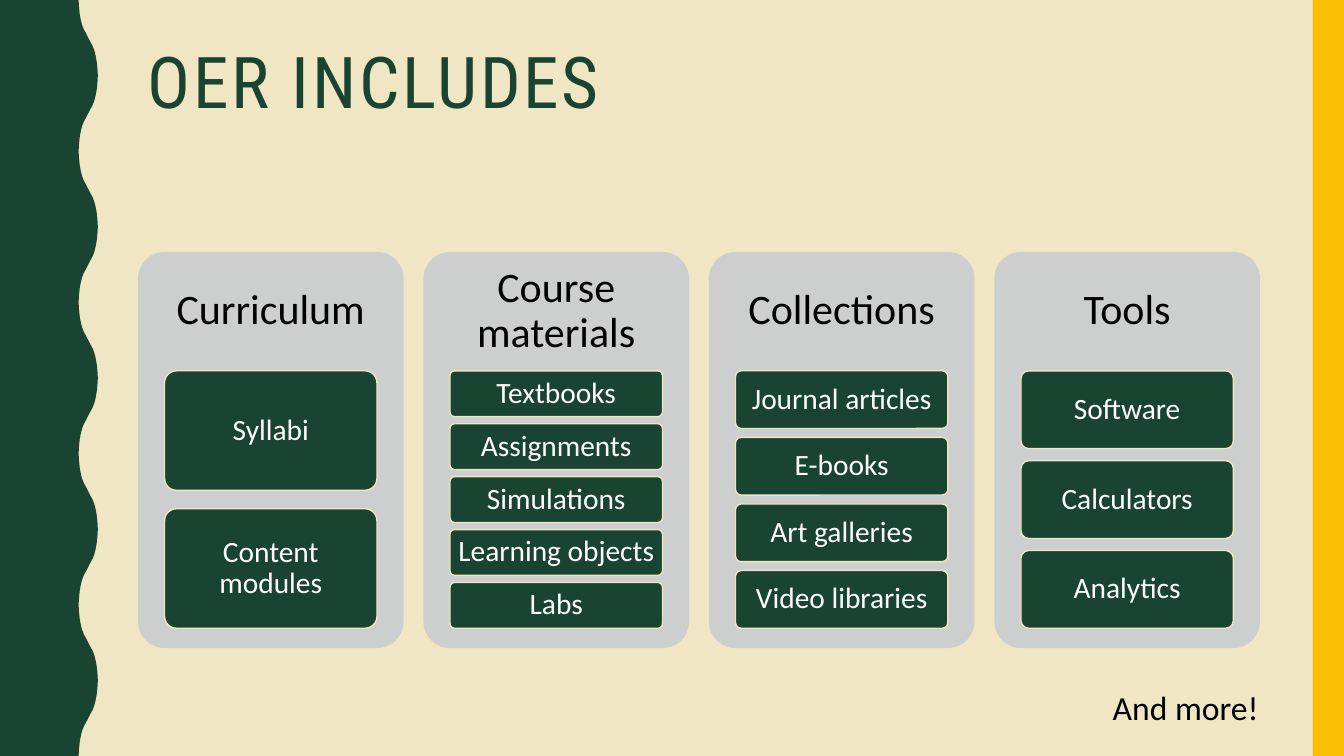
from dataclasses import dataclass
from typing import Any

from pptx import Presentation
from pptx import util as u
from pptx.dml import color
from pptx.enum import shapes, text


@dataclass(frozen=True)
class Theme:
    cream: str = "F0E6C3"
    green: str = "194431"
    gold: str = "F8C000"
    grey: str = "CCCFCE"
    black: str = "000000"
    white: str = "FFFFFF"
    heading_font: str = "Roboto Condensed"
    body_font: str = "Calibri"
    title_size: int = 51
    header_size: int = 30
    more_size: int = 24
    item_size: int = 21
    title_tracking: int = 200


@dataclass(frozen=True)
class Area:
    """Percentages of the slide's width and height."""

    left: float
    top: float
    width: float
    height: float


@dataclass(frozen=True)
class Style:
    size: int
    colour: str
    font: str
    align: Any = text.PP_ALIGN.LEFT
    anchor: Any = text.MSO_ANCHOR.TOP
    spacing: float = 0.9
    side_inset: float = 0.1
    end_inset: float = 0.05


@dataclass(frozen=True)
class Category:
    header: str
    items: tuple[str, ...]


THEME = Theme()
SLIDE_WIDTH, SLIDE_HEIGHT = u.Inches(13.33), u.Inches(7.5)
CENTRED = {"align": text.PP_ALIGN.CENTER, "anchor": text.MSO_ANCHOR.MIDDLE}
TITLE = Style(THEME.title_size, THEME.green, THEME.heading_font)
HEADER = Style(THEME.header_size, THEME.black, THEME.body_font,
               side_inset=0.12, end_inset=0.12, **CENTRED)
ITEM = Style(THEME.item_size, THEME.white, THEME.body_font,
             side_inset=0.06, end_inset=0.04, **CENTRED)
MORE = Style(THEME.more_size, THEME.black, THEME.body_font, spacing=1.0)

FIRST_PANEL = Area(10.27, 33.33, 19.76, 52.4)
PANEL_PITCH = 21.24
HEADER_SHARE, STACK_SHARE, ITEM_SHARE = 0.3, 0.65, 0.8
GAP_SHARE = 0.154
CORNER = 0.1

WAVE_LEFT, WAVE_DEPTH, HALF_WAVES = 5.85, 1.43, 10
QUARTER = [(0, 0), (0.09, 0.02), (0.19, 0.06), (0.27, 0.12),
           (0.33, 0.18), (0.39, 0.27), (0.44, 0.38)]
HALF = QUARTER + [(0.5, 0.5)] + [(1 - drop, 1 - bulge) for drop, bulge in reversed(QUARTER)]

CATEGORIES = (
    Category("Curriculum", ("Syllabi", "Content modules")),
    Category("Course materials", ("Textbooks", "Assignments", "Simulations",
                                  "Learning objects", "Labs")),
    Category("Collections", ("Journal articles", "E-books", "Art galleries",
                             "Video libraries")),
    Category("Tools", ("Software", "Calculators", "Analytics")),
)


def across(percent: float) -> int:
    return round(SLIDE_WIDTH * percent / 100)


def down(percent: float) -> int:
    return round(SLIDE_HEIGHT * percent / 100)


def place(area: Area) -> tuple[int, int, int, int]:
    return across(area.left), down(area.top), across(area.width), down(area.height)


def apply(target: Any, values: dict[str, Any]) -> None:
    for name, value in values.items():
        setattr(target, name, value)


def paint(shape: Any, fill: str, line: str | None = None) -> None:
    shape.shadow.inherit = False
    shape.fill.solid()
    shape.fill.fore_color.rgb = color.RGBColor.from_string(fill)
    if line is None:
        shape.line.fill.background()
    else:
        shape.line.color.rgb = color.RGBColor.from_string(line)
        shape.line.width = u.Pt(1)


def write(shape: Any, words: str, style: Style) -> Any:
    frame = shape.text_frame
    side, end = u.Inches(style.side_inset), u.Inches(style.end_inset)
    apply(frame, {"word_wrap": True, "vertical_anchor": style.anchor,
                  "margin_left": side, "margin_right": side,
                  "margin_top": end, "margin_bottom": end})
    para = frame.paragraphs[0]
    apply(para, {"alignment": style.align, "line_spacing": style.spacing})
    span = para.add_run()
    span.text = words
    apply(span.font, {"size": u.Pt(style.size), "name": style.font})
    span.font.color.rgb = color.RGBColor.from_string(style.colour)
    return span


def add_words(page: Any, area: Area, words: str, style: Style) -> Any:
    return write(page.shapes.add_textbox(*place(area)), words, style)


def add_box(page: Any, area: Area, fill: str, line: str | None = None,
            kind: Any = shapes.MSO_SHAPE.ROUNDED_RECTANGLE) -> Any:
    box = page.shapes.add_shape(kind, *place(area))
    if kind == shapes.MSO_SHAPE.ROUNDED_RECTANGLE:
        box.adjustments[0] = CORNER
    paint(box, fill, line)
    return box


def add_wave(page: Any) -> None:
    height = 100 / HALF_WAVES
    edge = [
        (across(WAVE_LEFT + WAVE_DEPTH * (1 - bulge if half % 2 else bulge)),
         down((half + drop) * height))
        for half in range(HALF_WAVES) for drop, bulge in HALF
    ]
    outline = page.shapes.build_freeform(0, 0)
    outline.add_line_segments(edge + [(0, SLIDE_HEIGHT)], close=True)
    paint(outline.convert_to_shape(), THEME.green)


def add_category(page: Any, category: Category, column: int) -> None:
    panel = Area(FIRST_PANEL.left + column * PANEL_PITCH, FIRST_PANEL.top,
                 FIRST_PANEL.width, FIRST_PANEL.height)
    header_height = panel.height * HEADER_SHARE
    add_box(page, panel, THEME.grey)
    add_words(page, Area(panel.left, panel.top, panel.width, header_height),
              category.header, HEADER)
    count = len(category.items)
    height = panel.height * STACK_SHARE / (count + (count - 1) * GAP_SHARE)
    left = panel.left + panel.width * (1 - ITEM_SHARE) / 2
    for row, words in enumerate(category.items):
        top = panel.top + header_height + row * height * (1 + GAP_SHARE)
        area = Area(left, top, panel.width * ITEM_SHARE, height)
        write(add_box(page, area, THEME.green, THEME.cream), words, ITEM)


def main() -> None:
    deck = Presentation()
    apply(deck, {"slide_width": SLIDE_WIDTH, "slide_height": SLIDE_HEIGHT})
    page = deck.slides.add_slide(deck.slide_layouts[6])
    page.background.fill.solid()
    page.background.fill.fore_color.rgb = color.RGBColor.from_string(THEME.cream)
    add_wave(page)
    add_box(page, Area(97.67, 0, 2.33, 100), THEME.gold, kind=shapes.MSO_SHAPE.RECTANGLE)
    title = add_words(page, Area(10.27, 5.6, 83.5, 21.73), "OER INCLUDES", TITLE)
    title.font._element.set("spc", str(THEME.title_tracking))
    for column, category in enumerate(CATEGORIES):
        add_category(page, category, column)
    add_words(page, Area(82.05, 90.27, 13.73, 6.67), "And more!", MORE)
    deck.save("out.pptx")


if __name__ == "__main__":
    main()
